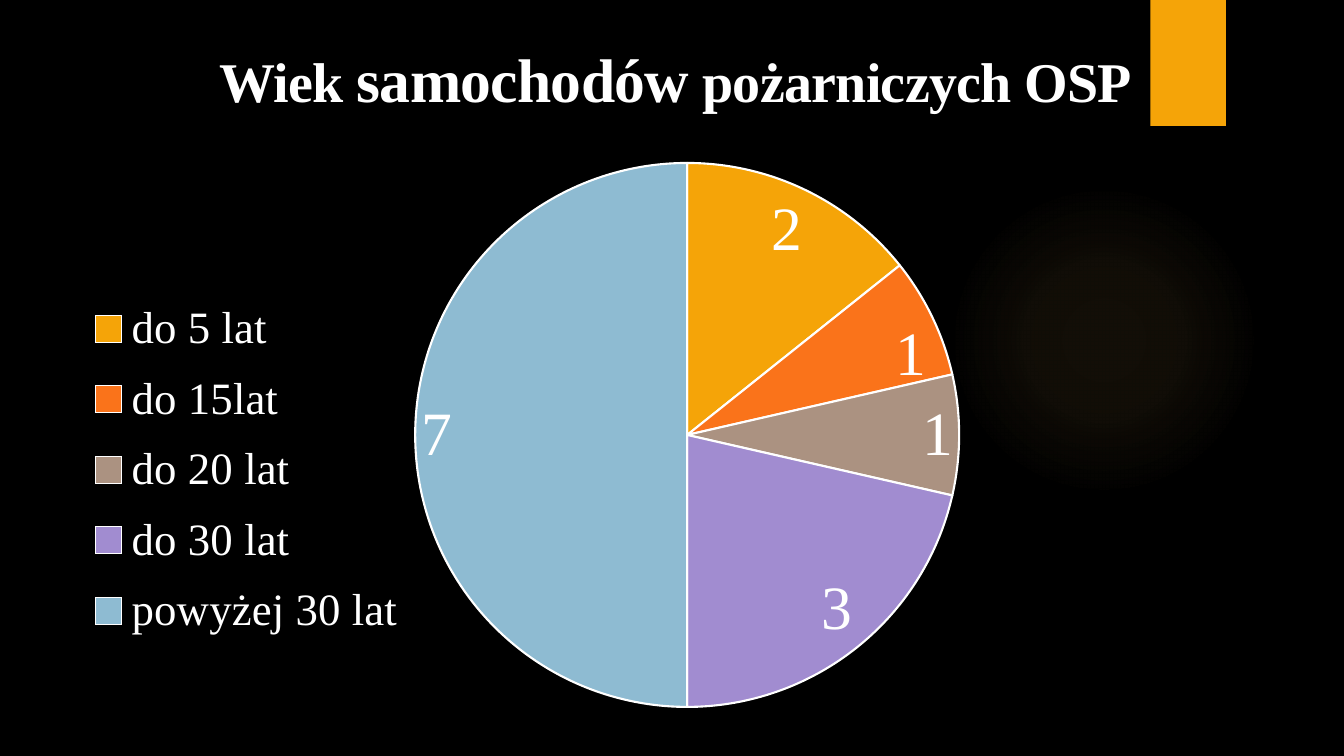
import dataclasses

import lxml.etree
import pptx
import pptx.chart.data
import pptx.dml.color
import pptx.enum.chart
import pptx.enum.shapes
import pptx.enum.text
import pptx.oxml
import pptx.oxml.ns
import pptx.util

Pt = pptx.util.Pt
qn = pptx.oxml.ns.qn


@dataclasses.dataclass(frozen=True)
class Theme:
    background: str = "000000"
    text: str = "FFFFFF"
    accent: str = "F5A408"
    glow: str = "FAC96A"
    slices: tuple = ("F5A408", "FA731A", "AB9281", "A18CD0", "8EBBD2")
    font: str = "Times New Roman"
    chart_font: str = "TeX Gyre Adventor"
    title_size: int = 40
    emphasis_size: int = 44
    label_size: int = 44
    legend_size: int = 32
    chart_size: int = 10


def color(value):
    return pptx.dml.color.RGBColor.from_string(value)


def place(element, index, frame, bounds, inner=False):
    for layout in element.findall(qn("c:layout")):
        element.remove(layout)
    layout = lxml.etree.Element(qn("c:layout"))
    manual = lxml.etree.SubElement(layout, qn("c:manualLayout"))
    left, top, width, height = bounds
    frame_left, frame_top, frame_width, frame_height = frame
    settings = {"layoutTarget": "inner"} if inner else {}
    settings.update(
        xMode="edge",
        yMode="edge",
        x=round((left - frame_left) / frame_width, 4),
        y=round((top - frame_top) / frame_height, 4),
        w=round(width / frame_width, 4),
        h=round(height / frame_height, 4),
    )
    for name, value in settings.items():
        lxml.etree.SubElement(manual, qn(f"c:{name}")).set("val", str(value))
    element.insert(index, layout)


class SlideBuilder:
    def __init__(self, presentation, theme):
        self.theme = theme
        self.slide = presentation.slides.add_slide(presentation.slide_layouts[6])
        fill = self.slide.background.fill
        fill.solid()
        fill.fore_color.rgb = color(theme.background)

    def style_font(self, font, size, name=None):
        font.name = name or self.theme.font
        font.size = Pt(size)
        font.color.rgb = color(self.theme.text)

    def shape(self, kind, bounds, fill):
        shape = self.slide.shapes.add_shape(kind, *map(Pt, bounds))
        shape.shadow.inherit = False
        shape.line.fill.background()
        shape.fill.solid()
        shape.fill.fore_color.rgb = color(fill)
        return shape

    def glow(self, bounds, stops):
        shape = self.shape(pptx.enum.shapes.MSO_SHAPE.OVAL, bounds, self.theme.glow)
        stop_xml = "".join(
            f'<a:gs pos="{position * 1000}"><a:srgbClr val="{self.theme.glow}">'
            f'<a:alpha val="{alpha * 1000}"/></a:srgbClr></a:gs>'
            for position, alpha in stops
        )
        gradient = pptx.oxml.parse_xml(
            f'<a:gradFill {pptx.oxml.ns.nsdecls("a")}><a:gsLst>{stop_xml}</a:gsLst>'
            '<a:path path="circle"><a:fillToRect l="50000" t="50000" r="50000" b="50000"/>'
            "</a:path></a:gradFill>"
        )
        properties = shape._element.spPr
        properties.replace(properties.find(qn("a:solidFill")), gradient)

    def title(self, bounds, runs):
        box = self.slide.shapes.add_textbox(*map(Pt, bounds))
        frame = box.text_frame
        frame.word_wrap = True
        frame.vertical_anchor = pptx.enum.text.MSO_ANCHOR.MIDDLE
        paragraph = frame.paragraphs[0]
        paragraph.alignment = pptx.enum.text.PP_ALIGN.CENTER
        for text, size in runs:
            run = paragraph.add_run()
            run.text = text
            self.style_font(run.font, size)
            run.font.bold = True
            run.font._element.set("spc", "-50")

    def pie(self, frame, pie_bounds, legend_bounds, series_name, ages):
        theme = self.theme
        data = pptx.chart.data.CategoryChartData()
        data.categories = list(ages)
        data.add_series(series_name, list(ages.values()))
        chart = self.slide.shapes.add_chart(
            pptx.enum.chart.XL_CHART_TYPE.PIE, *map(Pt, frame), data
        ).chart
        chart.has_title = False
        self.style_font(chart.font, theme.chart_size, theme.chart_font)

        chart.has_legend = True
        legend = chart.legend
        legend.position = pptx.enum.chart.XL_LEGEND_POSITION.BOTTOM
        legend.include_in_layout = False
        self.style_font(legend.font, theme.legend_size)
        place(legend._element, 1, frame, legend_bounds)

        plot = chart.plots[0]
        plot.vary_by_categories = True
        for index, fill in enumerate(theme.slices):
            point_format = plot.series[0].points[index].format
            point_format.fill.solid()
            point_format.fill.fore_color.rgb = color(fill)
            point_format.line.color.rgb = color(theme.text)
            point_format.line.width = Pt(1.5)

        plot.has_data_labels = True
        labels = plot.data_labels
        labels.show_value = True
        labels.show_percentage = False
        labels.position = pptx.enum.chart.XL_LABEL_POSITION.INSIDE_END
        self.style_font(labels.font, theme.label_size)
        plot_area = chart._chartSpace.chart.plotArea
        place(plot_area, 0, frame, pie_bounds, inner=True)


def main():
    theme = Theme()
    presentation = pptx.Presentation()
    presentation.slide_width = Pt(960)
    presentation.slide_height = Pt(540)
    builder = SlideBuilder(presentation, theme)
    builder.glow((677.5, 131.8, 221.8, 221.8), ((0, 7), (36, 6), (69, 0)))
    builder.shape(
        pptx.enum.shapes.MSO_SHAPE.RECTANGLE, (821.7, 0, 54, 90), theme.accent
    )
    builder.title(
        (86.4, 22.3, 792, 67),
        (
            ("Wiek ", theme.title_size),
            ("samochodów", theme.emphasis_size),
            (" pożarniczych OSP", theme.title_size),
        ),
    )
    builder.pie(
        frame=(48.2, 105.1, 911.5, 463),
        pie_bounds=(296.6, 116.4, 388.6, 388.6),
        legend_bounds=(62, 202, 228, 267),
        series_name="Series 1",
        ages={
            "do 5 lat": 2,
            "do 15lat": 1,
            "do 20 lat": 1,
            "do 30 lat": 3,
            "powyżej 30 lat": 7,
        },
    )
    presentation.save("out.pptx")


if __name__ == "__main__":
    main()
